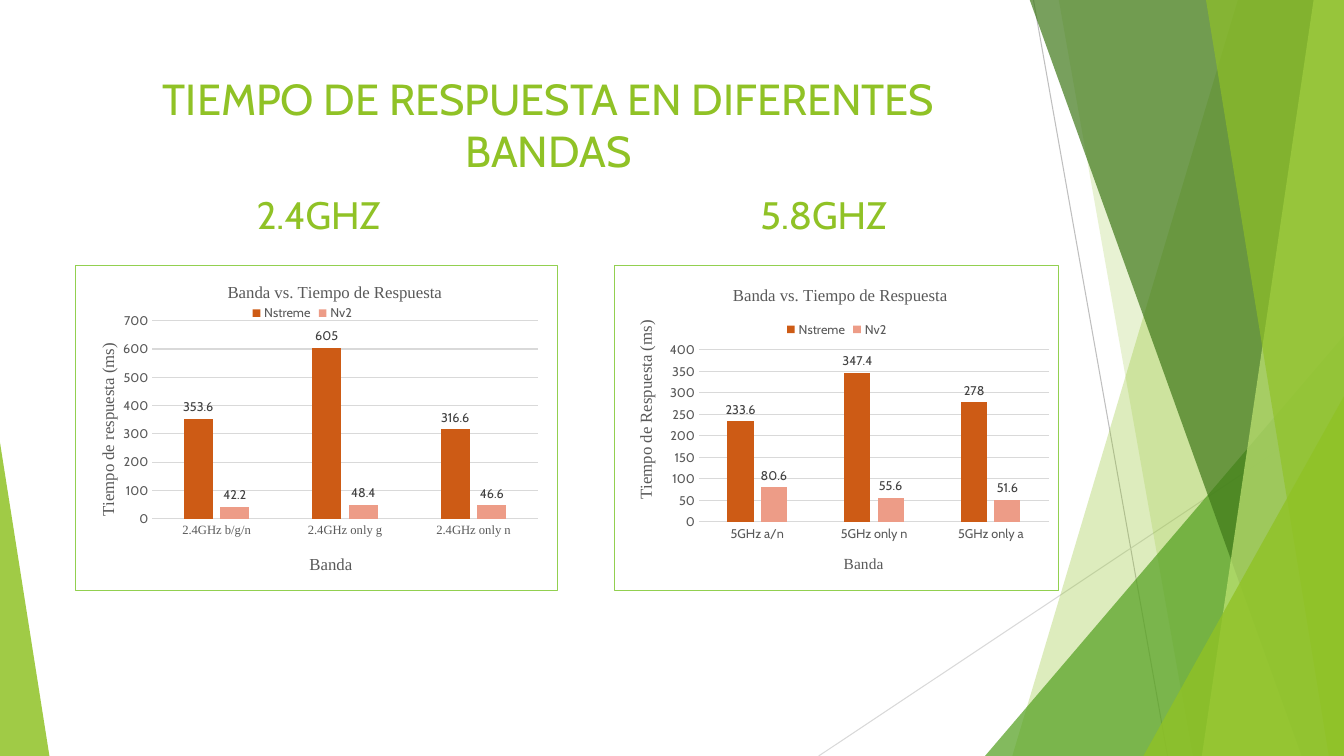
"""Build a slide comparing response times in the 2.4 GHz and 5.8 GHz bands."""
from lxml.etree import SubElement
from pptx import Presentation
from pptx.chart.data import CategoryChartData
from pptx.dml.color import RGBColor
from pptx.enum.chart import XL_CHART_TYPE, XL_LABEL_POSITION, XL_LEGEND_POSITION, XL_TICK_MARK
from pptx.enum.shapes import MSO_CONNECTOR, MSO_SHAPE
from pptx.enum.text import PP_ALIGN
from pptx.oxml import parse_xml
from pptx.oxml.ns import nsdecls, qn
from pptx.util import Inches, Pt

COLORS = {
    "green": "90C226", "grass": "54A021", "forest": "3F7819", "lime": "C0E474",
    "silver": "BFBFBF", "grid": "D9D9D9", "text": "595959", "label": "404040",
    "border": "92D050", "Nstreme": "CD5B15", "Nv2": "ED9C87", "white": "FFFFFF",
}
SERIF, SANS = "Times New Roman", "Cabin"


def style_font(font, size, color, name=SANS):
    """Apply size, typeface and colour to a font."""
    for attribute, value in {"size": Pt(size), "name": name, "bold": False}.items():
        setattr(font, attribute, value)
    font.color.rgb = RGBColor.from_string(COLORS[color])


def place(element, index, **fractions):
    """Give a chart element a manual layout in fractions of the chart."""
    for layout in element.findall(qn("c:layout")):
        element.remove(layout)
    layout = parse_xml(f"<c:layout {nsdecls('c')}><c:manualLayout/></c:layout>")
    modes = {"xMode": "edge", "yMode": "edge"}
    if index == 0:
        modes = {"layoutTarget": "inner", **modes}
    for tag, value in {**modes, **fractions}.items():
        SubElement(layout[0], qn(f"c:{tag}")).set("val", str(value))
    element.insert(index, layout)


presentation = Presentation()
presentation.slide_width, presentation.slide_height = Inches(13.33), Inches(7.5)
slide = presentation.slides.add_slide(presentation.slide_layouts[6])
shapes = slide.shapes

for x1, y1, x2, y2, color in [(10.25, 0, 11.58, 7.5, "silver"), (13.33, 4.03, 8.12, 7.5, "grid")]:
    connector = shapes.add_connector(
        MSO_CONNECTOR.STRAIGHT, Inches(x1), Inches(y1), Inches(x2), Inches(y2))
    connector.line.color.rgb = RGBColor.from_string(COLORS[color])
    connector.line.width = Pt(0.75)
    SubElement(connector._element.spPr, qn("a:effectLst"))

# Bands give top and bottom x; triangles give left, top, width and apex.
facets = [
    ("band", (12.28, 10.04), "green", 30),
    ("band", (10.5, 11.83), "green", 20),
    ("triangle", (9.77, 3.33, 3.56, 1), "grass", 72),
    ("band", (10.21, 12.91), "forest", 70),
    ("band", (13.03, 11.92), "lime", 70),
    ("band", (11.96, 13.18), "green", 65),
    ("triangle", (11.34, 3.93, 1.99, 1), "green", 80),
    ("triangle", (0, 4.39, 0.49, 0), "green", 85),
]
for kind, geometry, color, opacity in facets:
    if kind == "band":
        top_x, bottom_x = geometry
        builder = shapes.build_freeform(Inches(top_x), Inches(-0.01))
        corners = [(13.33, -0.01), (13.33, 7.5), (bottom_x, 7.5)]
        builder.add_line_segments([(Inches(x), Inches(y)) for x, y in corners])
        facet = builder.convert_to_shape()
    else:
        left, top, width, apex = geometry
        facet = shapes.add_shape(MSO_SHAPE.ISOSCELES_TRIANGLE, Inches(left), Inches(top),
                                 Inches(width), Inches(7.5 - top))
        facet.adjustments[0] = apex
    facet.shadow.inherit = False
    facet.line.fill.background()
    facet.fill.solid()
    facet.fill.fore_color.rgb = RGBColor.from_string(COLORS[color])
    tint = facet._element.spPr.find(qn("a:solidFill"))[0]
    SubElement(tint, qn("a:alpha")).set("val", str(opacity * 1000))

headings = [
    ("TIEMPO DE RESPUESTA EN DIFERENTES BANDAS", 0.74, 0.67, 9.4, 1.44, 31),
    ("2.4GHZ", 1.66, 1.85, 3, 0.6, 27.3),
    ("5.8GHZ", 6.67, 1.85, 3, 0.6, 27.3),
]
for text, left, top, width, height, size in headings:
    heading = shapes.add_textbox(Inches(left), Inches(top), Inches(width), Inches(height))
    heading.text_frame.word_wrap = True
    paragraph = heading.text_frame.paragraphs[0]
    paragraph.alignment = PP_ALIGN.CENTER
    run = paragraph.add_run()
    run.text = text
    style_font(run.font, size, "green")

charts = [
    {"left": 0.74, "width": 4.79, "categories": ["2.4GHz b/g/n", "2.4GHz only g", "2.4GHz only n"],
     "values": {"Nstreme": [353.6, 605, 316.6], "Nv2": [42.2, 48.4, 46.6]},
     "value_title": "Tiempo de respuesta (ms)", "maximum": 700, "step": 100,
     "category_font": SERIF, "category_size": 12,
     "plot": (0.16, 0.17, 0.8, 0.61), "title": (0.31, 0.04), "legend": (0.36, 0.11),
     "value_at": (0.04, 0.23), "category_at": (0.48, 0.88)},
    {"left": 6.09, "width": 4.41, "categories": ["5GHz a/n", "5GHz only n", "5GHz only a"],
     "values": {"Nstreme": [233.6, 347.4, 278], "Nv2": [80.6, 55.6, 51.6]},
     "value_title": "Tiempo de Respuesta (ms)", "maximum": 400, "step": 50,
     "category_font": SANS, "category_size": 11,
     "plot": (0.19, 0.26, 0.79, 0.53), "title": (0.26, 0.05), "legend": (0.38, 0.16),
     "value_at": (0.04, 0.16), "category_at": (0.51, 0.88)},
]
for band in charts:
    data = CategoryChartData()
    data.categories = band["categories"]
    for name, values in band["values"].items():
        data.add_series(name, values)
    chart = shapes.add_chart(XL_CHART_TYPE.COLUMN_CLUSTERED, Inches(band["left"]), Inches(2.63),
                             Inches(band["width"]), Inches(3.23), data).chart
    chart.font.size, chart.font.name = Pt(10), SANS
    chart.element.find(qn("c:chart")).addnext(parse_xml(
        f"<c:spPr {nsdecls('c', 'a')}>"
        f'<a:solidFill><a:srgbClr val="{COLORS["white"]}"/></a:solidFill>'
        f'<a:ln w="9525"><a:solidFill><a:srgbClr val="{COLORS["border"]}"/></a:solidFill></a:ln>'
        "</c:spPr>"))

    value_axis, category_axis = chart.value_axis, chart.category_axis
    titles = [
        (chart.chart_title, "Banda vs. Tiempo de Respuesta", 12, band["title"]),
        (value_axis.axis_title, band["value_title"], 12, band["value_at"]),
        (category_axis.axis_title, "Banda", band["category_size"], band["category_at"]),
    ]
    for title, text, size, (x, y) in titles:
        run = title.text_frame.paragraphs[0].add_run()
        run.text = text
        style_font(run.font, size, "text", SERIF)
        place(title._element, 1, x=x, y=y)

    for axis, name in [(value_axis, SANS), (category_axis, band["category_font"])]:
        axis.major_tick_mark = axis.minor_tick_mark = XL_TICK_MARK.NONE
        style_font(axis.tick_labels.font, 9, "text", name)
    scale = {"minimum_scale": 0, "maximum_scale": band["maximum"], "major_unit": band["step"]}
    for attribute, value in scale.items():
        setattr(value_axis, attribute, value)
    value_axis.format.line.fill.background()
    for line in (value_axis.major_gridlines.format.line, category_axis.format.line):
        line.color.rgb = RGBColor.from_string(COLORS["grid"])
        line.width = Pt(0.75)

    chart.has_legend = True
    chart.legend.position = XL_LEGEND_POSITION.TOP
    chart.legend.include_in_layout = False
    style_font(chart.legend.font, 9, "text")
    place(chart.legend._element, 1, x=band["legend"][0], y=band["legend"][1])
    place(chart.element.find(f".//{qn('c:plotArea')}"), 0, **dict(zip("xywh", band["plot"])))

    plot = chart.plots[0]
    for attribute, value in {"gap_width": 219, "overlap": -27, "vary_by_categories": False}.items():
        setattr(plot, attribute, value)
    for series in plot.series:
        series.format.fill.solid()
        series.format.fill.fore_color.rgb = RGBColor.from_string(COLORS[series.name])
        labels = series.data_labels
        labels.show_value = True
        labels.position = XL_LABEL_POSITION.OUTSIDE_END
        style_font(labels.font, 9, "label")

presentation.save("out.pptx")
